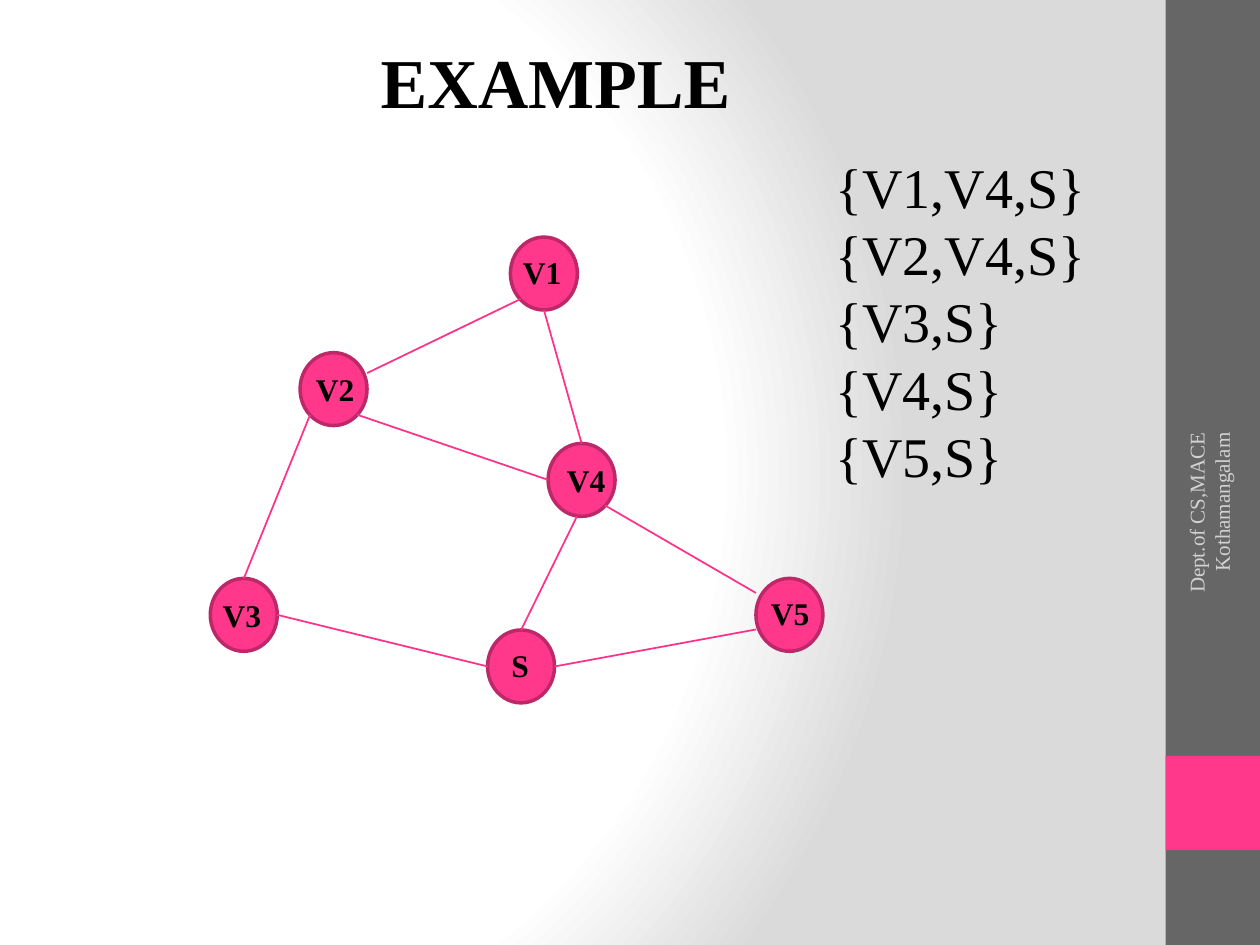
from pptx import Presentation, util as u
from pptx.dml.color import RGBColor
from pptx.enum import shapes, text
from pptx.oxml import parse_xml
from pptx.oxml.ns import nsdecls, qn

GREY = RGBColor(0x66, 0x66, 0x66)
PINK = RGBColor(0xFF, 0x38, 0x8C)
RIM = RGBColor(0xBD, 0x29, 0x68)
EDGE = RGBColor(0xFE, 0x32, 0x88)
PALE = RGBColor(0xD2, 0xD2, 0xD2)
BLACK = RGBColor(0, 0, 0)
BACK_STOPS = [(0, "FFFFFF"), (75, "FFFFFF"), (100, "DADADA")]

NODE_W, NODE_H = 1.35, 1.47

# Node name: left, top, label offset right, label offset down, label width (cm)
NODES = {
    "V1": (10.29, 4.78, 0, 0.2, 1.3),
    "V2": (6.05, 7.11, 0.07, 0.23, 1.3),
    "V3": (4.24, 11.66, 0, 0.23, 1.3),
    "V4": (11.05, 8.94, 0.13, 0.23, 1.3),
    "V5": (15.24, 11.66, 0.05, 0.2, 1.3),
    "S": (9.83, 12.7, 0.23, 0.2, 0.86),
}

# Points on a node, as fractions of its width and height
TOP, BOTTOM, LEFT, RIGHT = (0.5, 0), (0.5, 1), (0, 0.5), (1, 0.5)
LOWER_LEFT, LOWER_RIGHT = (0.15, 0.85), (0.85, 0.85)
EDGES = [
    ("V1", LOWER_LEFT, "V2", (1, 0.28)),
    ("V2", LOWER_LEFT, "V3", TOP),
    ("V3", RIGHT, "S", LEFT),
    ("V1", BOTTOM, "V4", TOP),
    ("S", RIGHT, "V5", (0, 0.7)),
    ("V4", (0.43, 1), "S", TOP),
    ("V4", LOWER_RIGHT, "V5", (0, 0.2)),
    ("V2", LOWER_RIGHT, "V4", LEFT),
]
PATHS = ["{V1,V4,S}", "{V2,V4,S}", "{V3,S}", "{V4,S}", "{V5,S}"]


class Painter:
    font = "Times New Roman"

    def __init__(self, page):
        self.page = page

    def background(self, stops):
        self.page.background.fill.solid()
        solid = self.page.element.find(".//" + qn("p:bgPr"))[0]
        marks = "".join(f'<a:gs pos="{at * 1000}"><a:srgbClr val="{color}"/></a:gs>'
                        for at, color in stops)
        gradient = parse_xml(
            f'<a:gradFill {nsdecls("a")} rotWithShape="1"><a:gsLst>{marks}</a:gsLst>'
            '<a:path path="circle"><a:fillToRect l="20000" t="50000" r="100000" b="50000"/>'
            '</a:path></a:gradFill>')
        solid.getparent().replace(solid, gradient)

    def shape(self, kind, left, top, width, height, fill, rim=None):
        shape = self.page.shapes.add_shape(
            kind, *map(u.Cm, (left, top, width, height)))
        shape.shadow.inherit = False
        shape.fill.solid()
        shape.fill.fore_color.rgb = fill
        if rim is None:
            shape.line.fill.background()
        else:
            shape.line.color.rgb = rim
            shape.line.width = u.Pt(2)

    def edge(self, start, end):
        line = self.page.shapes.add_connector(
            shapes.MSO_CONNECTOR.STRAIGHT, *map(u.Cm, start + end))
        line.line.color.rgb = EDGE
        line.line.width = u.Pt(1)
        line.element.spPr.append(parse_xml(f'<a:effectLst {nsdecls("a")}/>'))

    def fill_text(self, box, lines, size, color=BLACK, bold=False,
                  align=text.PP_ALIGN.LEFT, **frame_format):
        frame = box.text_frame
        settings = {"word_wrap": True, "auto_size": text.MSO_AUTO_SIZE.NONE,
                    "vertical_anchor": text.MSO_ANCHOR.TOP, **frame_format}
        for name, value in settings.items():
            setattr(frame, name, value)
        for index, line in enumerate(lines):
            para = frame.add_paragraph() if index else frame.paragraphs[0]
            para.alignment = align
            span = para.add_run()
            span.text = line
            for name, value in {"name": self.font, "size": u.Pt(size), "bold": bold}.items():
                setattr(span.font, name, value)
            span.font.color.rgb = color

    def textbox(self, left, top, width, height, lines, size, **formats):
        box = self.page.shapes.add_textbox(*map(u.Cm, (left, top, width, height)))
        self.fill_text(box, lines, size, **formats)
        return box

    def title(self, left, top, width, height, line, size):
        box = self.page.shapes.title
        places = {"left": left, "top": top, "width": width, "height": height}
        for name, value in places.items():
            setattr(box, name, u.Cm(value))
        self.fill_text(box, [line], size, bold=True)


def point(name, place):
    left, top = NODES[name][:2]
    return left + place[0] * NODE_W, top + place[1] * NODE_H


def main():
    deck = Presentation()
    deck.slide_width, deck.slide_height = u.Cm(25.4), u.Cm(19.05)
    painter = Painter(deck.slides.add_slide(deck.slide_layouts[5]))

    # Background, side bar and footer
    painter.background(BACK_STOPS)
    bar = shapes.MSO_SHAPE.RECTANGLE
    painter.shape(bar, 23.5, 0, 1.9, 19.05, GREY)
    painter.shape(bar, 23.5, 15.24, 1.9, 1.9, PINK)
    footer = painter.textbox(
        21.08, 11.25, 6.58, 1.02, ["Dept.of CS,MACE Kothamangalam"], 12, color=PALE,
        align=text.PP_ALIGN.RIGHT, vertical_anchor=text.MSO_ANCHOR.MIDDLE,
        margin_left=u.Cm(0.6))
    footer.rotation = 270

    # Graph: nodes, edges, then labels
    for left, top, *_ in NODES.values():
        painter.shape(shapes.MSO_SHAPE.OVAL, left, top, NODE_W, NODE_H, PINK, RIM)
    for first, leave, second, arrive in EDGES:
        painter.edge(point(first, leave), point(second, arrive))
    for name, (left, top, right, down, width) in NODES.items():
        painter.textbox(left + right, top + down, width, 1.02, [name], 18,
                        bold=True, word_wrap=False)

    # Title and list of paths
    painter.title(7.42, 0.64, 19.05, 1.96, "EXAMPLE", 40)
    painter.textbox(16.59, 2.95, 8.26, 7.09, PATHS, 32)

    deck.save("out.pptx")


if __name__ == "__main__":
    main()
